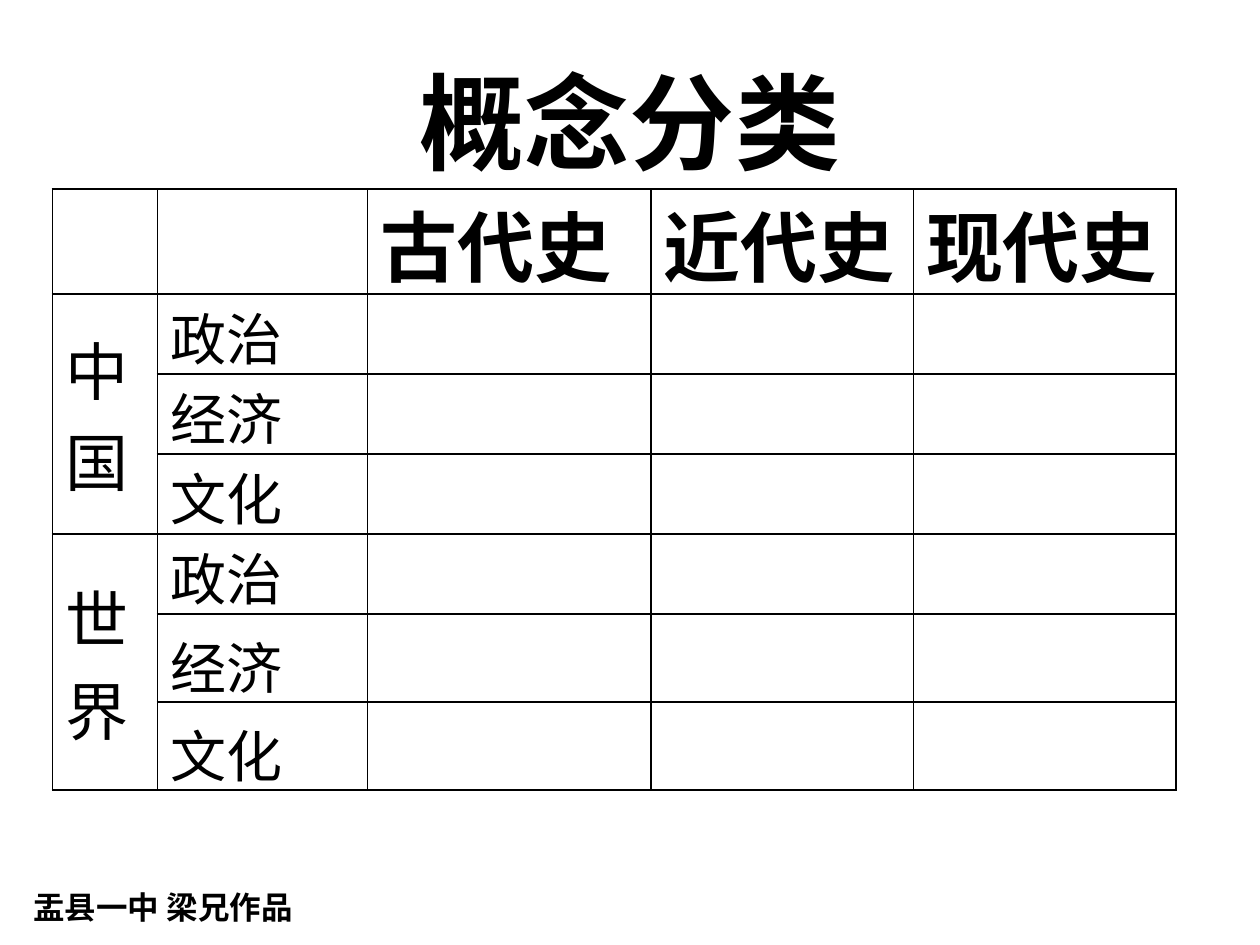
from dataclasses import dataclass

from lxml import etree
from pptx import Presentation
from pptx.dml.color import RGBColor
from pptx.enum import text
from pptx.oxml import ns
from pptx.util import Pt


@dataclass(frozen=True)
class Theme:
    ink: str = "000000"
    rule: float = 1
    head_font: str = "Noto Sans CJK JP"
    body_font: str = "Noto Sans CJK SC"
    title: int = 60
    head: int = 44
    region: int = 36
    topic: int = 32
    credit: int = 18


@dataclass(frozen=True)
class Box:
    left: float
    top: float
    width: float
    height: float

    def emu(self) -> list:
        return [Pt(v) for v in (self.left, self.top, self.width, self.height)]


THEME = Theme()
MID, LOW = text.MSO_ANCHOR.MIDDLE, text.MSO_ANCHOR.BOTTOM
PERIODS = ["古代史", "近代史", "现代史"]
REGIONS = ["中国", "世界"]
TOPICS = ["政治", "经济", "文化"]
COLS = [60, 120, 162, 150, 150]
ROWS = [60] + [45.7] * 4 + [50.4] * 2


def write(frame, words: str, *, size: float, font: str, bold: bool = False,
          align=text.PP_ALIGN.LEFT, space: float = 1) -> None:
    para = frame.paragraphs[0]
    para.alignment = align
    para.line_spacing = space
    run = para.add_run()
    run.text = words
    run.font.size = Pt(size)
    run.font.bold = bold
    run.font.name = font
    run.font.color.rgb = RGBColor.from_string(THEME.ink)
    east = etree.SubElement(run.font._element, ns.qn("a:ea"))
    east.set("typeface", font)


def label(slide, box: Box, words: str, *, anchor=text.MSO_ANCHOR.TOP, **style) -> None:
    frame = slide.shapes.add_textbox(*box.emu()).text_frame
    frame.word_wrap = True
    frame.vertical_anchor = anchor
    write(frame, words, **style)


def border(cell) -> None:
    """Clear the cell's fill and rule all four sides."""
    cell.fill.background()
    props = cell._tc.get_or_add_tcPr()
    for i, side in enumerate("LRTB"):
        line = etree.Element(ns.qn(f"a:ln{side}"), w=str(Pt(THEME.rule)))
        fill = etree.SubElement(line, ns.qn("a:solidFill"))
        etree.SubElement(fill, ns.qn("a:srgbClr"), val=THEME.ink)
        props.insert(i, line)


def entry(cell, words: str, **style) -> None:
    """Seat one tight line of text on the bottom rule of a cell."""
    cell.vertical_anchor = LOW
    cell.margin_top = cell.margin_bottom = 0
    write(cell.text_frame, words, space=0.8, **style)


def grid(slide, box: Box) -> None:
    frame = slide.shapes.add_table(len(ROWS), len(COLS), *box.emu())
    table = frame.table
    table.first_row = table.horz_banding = False
    for col, width in zip(table.columns, COLS):
        col.width = Pt(width)
    for row, height in zip(table.rows, ROWS):
        row.height = Pt(height)
    for cell in table.iter_cells():
        border(cell)

    for c, period in enumerate(PERIODS, 2):
        entry(table.cell(0, c), period, size=THEME.head,
              font=THEME.head_font, bold=True)
    span = len(TOPICS)
    for i, region in enumerate(REGIONS):
        first = 1 + i * span
        cell = table.cell(first, 0)
        cell.merge(table.cell(first + span - 1, 0))
        cell.vertical_anchor = MID
        write(cell.text_frame, region, size=THEME.region, font=THEME.body_font)
        for r, topic in enumerate(TOPICS, first):
            entry(table.cell(r, 1), topic, size=THEME.topic, font=THEME.body_font)


def main() -> None:
    deck = Presentation()
    deck.slide_width, deck.slide_height = Pt(720), Pt(540)
    slide = deck.slides.add_slide(deck.slide_layouts[6])
    grid(slide, Box(30, 108, sum(COLS), sum(ROWS)))
    label(slide, Box(12, 504, 168, 24), "盂县一中 梁兄作品",
          size=THEME.credit, font=THEME.body_font, bold=True)
    label(slide, Box(36, 24, 648, 90), "概念分类", anchor=MID, size=THEME.title,
          font=THEME.head_font, bold=True, align=text.PP_ALIGN.CENTER)
    deck.save("out.pptx")


if __name__ == "__main__":
    main()
